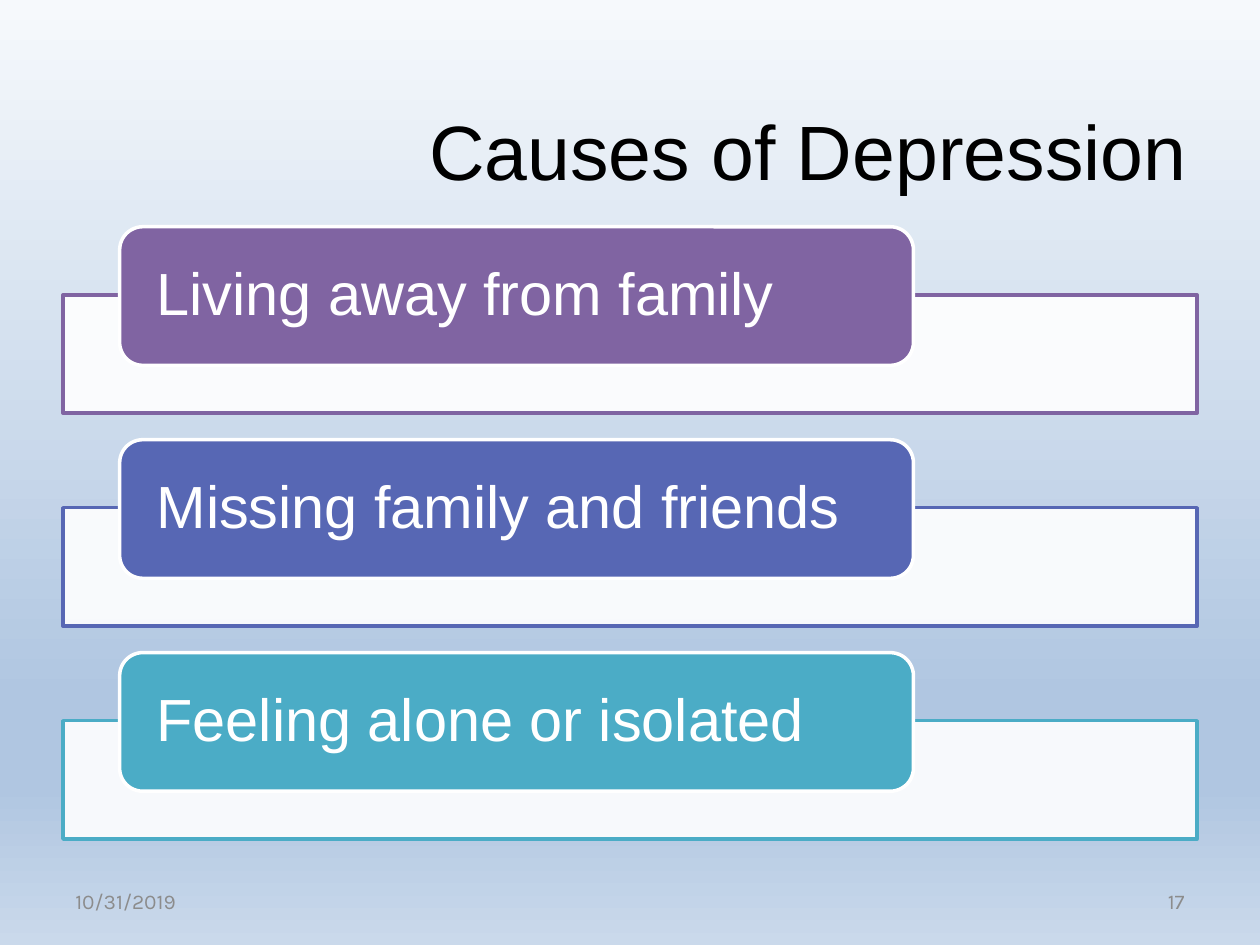
"""Build the "Causes of Depression" slide with three labelled bars."""
from copy import deepcopy

from lxml.etree import SubElement
from pptx import Presentation
from pptx.dml.color import RGBColor
from pptx.enum.shapes import MSO_SHAPE
from pptx.enum.text import MSO_ANCHOR, PP_ALIGN
from pptx.oxml.ns import qn
from pptx.util import Inches, Pt

COLORS = {
    "white": "FFFFFF",
    "black": "000000",
    "gray": "8C8C8C",
    "purple": "8064A2",
    "indigo": "5767B4",
    "teal": "4BACC6",
}
BACKGROUND_STOPS = [(0, "F6F9FC"), (0.74, "B0C6E1"), (0.83, "B0C6E1"), (1, "CAD9EB")]
CAUSES = [
    ("Living away from family", "purple"),
    ("Missing family and friends", "indigo"),
    ("Feeling alone or isolated", "teal"),
]
MARGIN = 0.5
CONTENT_WIDTH = 10 - 2 * MARGIN
FIRST_ROW, ROW_PITCH = 1.8, 1.69
LABEL_INDENT, LABEL_HEIGHT = 0.05 * CONTENT_WIDTH, 1.1
BAR_DROP, BAR_HEIGHT = 0.54, 0.94
FOOTER_TOP, FOOTER_WIDTH, FOOTER_HEIGHT = 6.95, 2.33, 0.4


def write_text(shape, text, size, color, font="Arial", align=PP_ALIGN.LEFT,
               line_spacing=1, insets=(0.1, 0.05)):
    frame = shape.text_frame
    frame.word_wrap = True
    frame.vertical_anchor = MSO_ANCHOR.MIDDLE
    frame.margin_left = frame.margin_right = Inches(insets[0])
    frame.margin_top = frame.margin_bottom = Inches(insets[1])
    frame.text = text
    paragraph = frame.paragraphs[0]
    paragraph.alignment = align
    paragraph.line_spacing = line_spacing
    paragraph.font.name = font
    paragraph.font.size = Pt(size)
    paragraph.font.color.rgb = RGBColor.from_string(COLORS[color])


def add_box(slide, kind, left, top, width, height, fill, line):
    shape = slide.shapes.add_shape(
        kind, Inches(left), Inches(top), Inches(width), Inches(height))
    shape.shadow.inherit = False
    shape.fill.solid()
    shape.fill.fore_color.rgb = RGBColor.from_string(COLORS[fill])
    shape.line.color.rgb = RGBColor.from_string(COLORS[line])
    shape.line.width = Pt(2)
    return shape


presentation = Presentation()
presentation.slide_width, presentation.slide_height = Inches(10), Inches(7.5)
slide = presentation.slides.add_slide(presentation.slide_layouts[5])

background = slide.background.fill
background.gradient()
background.gradient_angle = 270
stop_list = slide.element.xpath(".//a:gsLst")[0]
while len(stop_list) < len(BACKGROUND_STOPS):
    stop_list.append(deepcopy(stop_list[0]))
for stop, (position, color) in zip(background.gradient_stops, BACKGROUND_STOPS):
    stop.position = position
    stop.color.rgb = RGBColor.from_string(color)

title = slide.shapes.title
title.left, title.top = Inches(3.08), Inches(0.67)
title.width, title.height = Inches(6.67), Inches(1.03)
write_text(title, "Causes of Depression", size=44, color="black", align=PP_ALIGN.CENTER)

for row, (cause, color) in enumerate(CAUSES):
    top = FIRST_ROW + row * ROW_PITCH
    bar = add_box(slide, MSO_SHAPE.RECTANGLE, MARGIN, top + BAR_DROP,
                  CONTENT_WIDTH, BAR_HEIGHT, fill="white", line=color)
    bar_color = bar.element.xpath("./p:spPr/a:solidFill/a:srgbClr")[0]
    SubElement(bar_color, qn("a:alpha"), val="90000")
    label = add_box(slide, MSO_SHAPE.ROUNDED_RECTANGLE, MARGIN + LABEL_INDENT, top,
                    0.7 * CONTENT_WIDTH, LABEL_HEIGHT, fill=color, line="white")
    write_text(label, cause, size=34, color="white", line_spacing=0.9, insets=(0.24, 0))

for left, text, align in [
    (MARGIN, "10/31/2019", PP_ALIGN.LEFT),
    (10 - MARGIN - FOOTER_WIDTH, "17", PP_ALIGN.RIGHT),
]:
    footer = slide.shapes.add_textbox(
        Inches(left), Inches(FOOTER_TOP), Inches(FOOTER_WIDTH), Inches(FOOTER_HEIGHT))
    write_text(footer, text, size=12, color="gray", font="Karla", align=align)

presentation.save("out.pptx")
